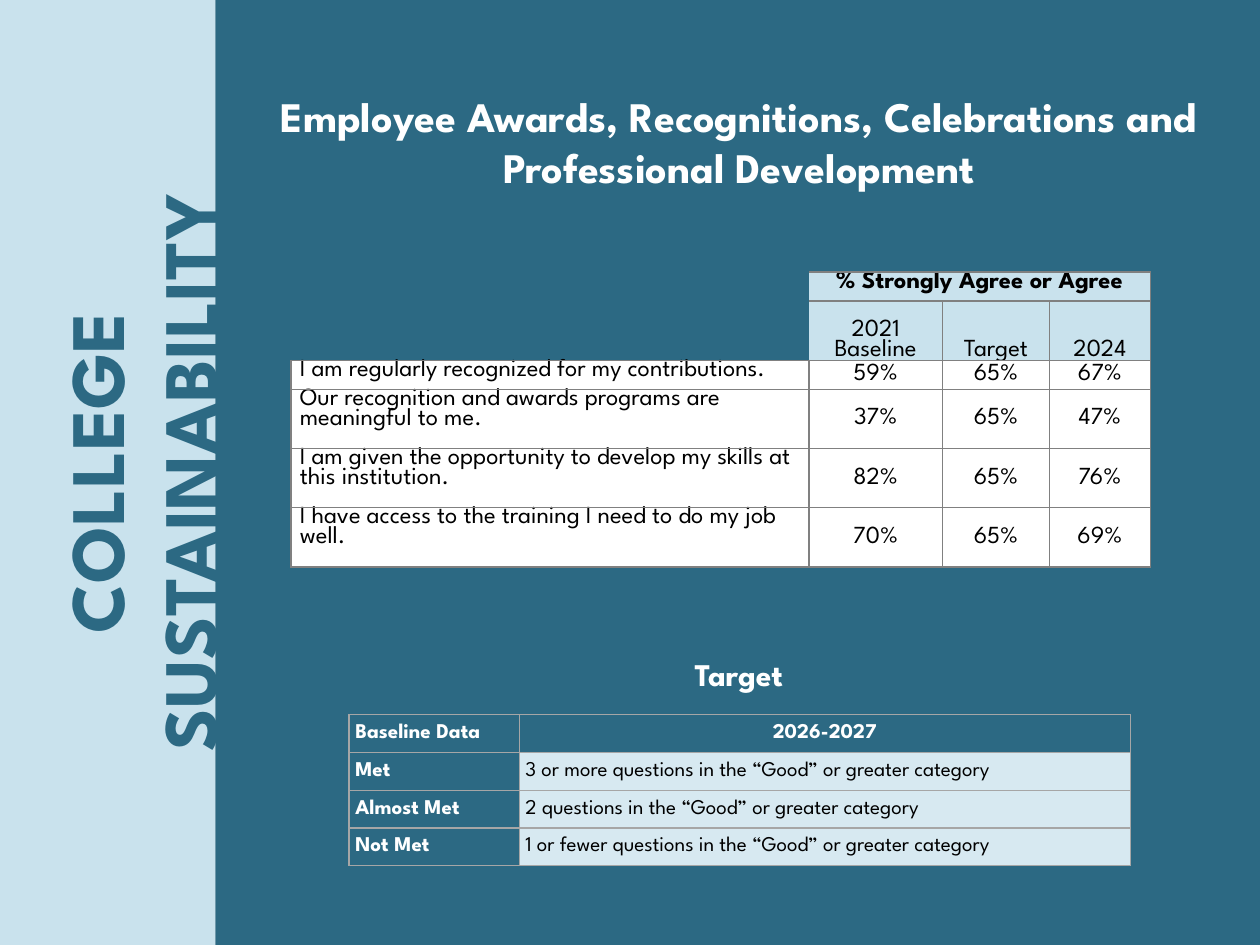
from lxml import etree
from pptx import Presentation
from pptx.dml.color import RGBColor
from pptx.enum.shapes import MSO_SHAPE
from pptx.enum.text import MSO_ANCHOR, MSO_AUTO_SIZE, PP_ALIGN
from pptx.oxml.ns import qn
from pptx.util import Inches, Pt

RECTANGLE = MSO_SHAPE.RECTANGLE
LEFT, CENTER = PP_ALIGN.LEFT, PP_ALIGN.CENTER
TOP, MIDDLE, BOTTOM = MSO_ANCHOR.TOP, MSO_ANCHOR.MIDDLE, MSO_ANCHOR.BOTTOM
FIT_SHAPE = MSO_AUTO_SIZE.SHAPE_TO_FIT_TEXT
FONT = "League Spartan"
COLORS = {
    "teal": "2C6983", "sidebar": "C9E2ED", "pale": "D7E9F1",
    "white": "FFFFFF", "black": "000000",
    "survey_border": "808080", "target_border": "A6A6A6",
}
SURVEY = [
    ("I am regularly recognized for my contributions.", "59%", "65%", "67%"),
    ("Our recognition and awards programs are meaningful to me.", "37%", "65%", "47%"),
    ("I am given the opportunity to develop my skills at this institution.",
     "82%", "65%", "76%"),
    ("I have access to the training I need to do my job well.", "70%", "65%", "69%"),
]
RATINGS = [
    ("Met", "3 or more questions in the “Good” or greater category"),
    ("Almost Met", "2 questions in the “Good” or greater category"),
    ("Not Met", "1 or fewer questions in the “Good” or greater category"),
]


def rgb(name):
    return RGBColor.from_string(COLORS[name])


def write(paragraph, text, size, color, bold, align):
    paragraph.alignment = align
    run = paragraph.add_run()
    run.text = text
    run.font.name = FONT
    run.font.size = Pt(size)
    run.font.bold = bold
    run.font.color.rgb = rgb(color)


def add_panel(slide, left, width, color):
    panel = slide.shapes.add_shape(RECTANGLE, Inches(left), 0, Inches(width), Inches(7.5))
    panel.shadow.inherit = False
    panel.fill.solid()
    panel.fill.fore_color.rgb = rgb(color)
    panel.line.fill.background()


def fill_heading(heading, box, lines, size, color):
    """Place a text box or title placeholder and write its bold centred lines."""
    heading.left, heading.top, heading.width, heading.height = map(Inches, box)
    frame = heading.text_frame
    frame.word_wrap = True
    frame.auto_size = FIT_SHAPE
    frame.vertical_anchor = TOP
    for index, line in enumerate(lines):
        paragraph = frame.add_paragraph() if index else frame.paragraphs[0]
        write(paragraph, line, size, color, True, CENTER)


def add_heading(slide, box, lines, size, color):
    heading = slide.shapes.add_textbox(0, 0, 0, 0)
    fill_heading(heading, box, lines, size, color)
    return heading


def add_table(slide, left, top, widths, heights):
    table = slide.shapes.add_table(
        len(heights), len(widths), Inches(left), Inches(top),
        Inches(sum(widths)), Inches(sum(heights))).table
    table.first_row = table.horz_banding = False
    for column, width in zip(table.columns, widths):
        column.width = Inches(width)
    for row, height in zip(table.rows, heights):
        row.height = Inches(height)
    return table


def style_cell(cell, fill, border, points, sides="LRTB", margins=(0, 0)):
    cell.margin_left = cell.margin_right = Inches(margins[0])
    cell.margin_top = cell.margin_bottom = Inches(margins[1])
    properties = cell._tc.get_or_add_tcPr()
    for side in "LRTB":
        drawn = side in sides
        line = etree.SubElement(properties, qn(f"a:ln{side}"),
                                w=str(Pt(points) if drawn else 0))
        if drawn:
            solid = etree.SubElement(line, qn("a:solidFill"))
            etree.SubElement(solid, qn("a:srgbClr"), val=COLORS[border])
        else:
            etree.SubElement(line, qn("a:noFill"))
    cell.fill.solid()
    cell.fill.fore_color.rgb = rgb(fill)


def fill_survey_cell(cell, text, fill, align=CENTER, anchor=MIDDLE, bold=False, sides="LRTB"):
    style_cell(cell, fill, "survey_border", 1, sides, (0.07, 0))
    cell.vertical_anchor = anchor
    paragraph = cell.text_frame.paragraphs[0]
    paragraph.line_spacing = 0.88
    write(paragraph, text, 14, "black", bold, align)


def leave_blank(cell, sides):
    style_cell(cell, "teal", "survey_border", 1, sides)
    etree.SubElement(cell.text_frame.paragraphs[0]._p, qn("a:endParaRPr"), sz="1000")


def add_survey_table(slide):
    one_line, two_lines = 0.23, 0.47
    table = add_table(slide, 2.31, 2.16, [4.11, 1.06, 0.85, 0.8],
                      [one_line, two_lines, one_line] + [two_lines] * 3)
    leave_blank(table.cell(0, 0), "")
    leave_blank(table.cell(1, 0), "B")
    table.cell(0, 1).merge(table.cell(0, 3))
    fill_survey_cell(table.cell(0, 1), "% Strongly Agree or Agree", "sidebar",
                     anchor=TOP, bold=True, sides="RTB")
    for column in (2, 3):
        style_cell(table.cell(0, column), "sidebar", "survey_border", 1, "RTB")
    for column, label in enumerate(("2021 Baseline", "Target", "2024"), 1):
        fill_survey_cell(table.cell(1, column), label, "sidebar", anchor=BOTTOM,
                         sides="RTB" if column == 1 else "LRTB")
    for row, (question, *percentages) in enumerate(SURVEY, 2):
        fill_survey_cell(table.cell(row, 0), question, "white", LEFT, TOP)
        for column, percentage in enumerate(percentages, 1):
            fill_survey_cell(table.cell(row, column), percentage, "white")


def add_target_table(slide):
    rows = [("Baseline Data", "2026-2027"), *RATINGS]
    table = add_table(slide, 2.77, 5.67, [1.35, 4.85], [0.3] * len(rows))
    for row, labels in enumerate(rows):
        for column, label in enumerate(labels):
            header = row == 0 or column == 0
            cell = table.cell(row, column)
            style_cell(cell, "teal" if header else "pale", "target_border", 0.75,
                       margins=(0.05, 0.05))
            cell.vertical_anchor = MIDDLE
            write(cell.text_frame.paragraphs[0], label, 12,
                  "white" if header else "black", header,
                  CENTER if row == 0 and column == 1 else LEFT)


def main():
    prs = Presentation()
    prs.slide_width, prs.slide_height = Inches(10), Inches(7.5)
    slide = prs.slides.add_slide(prs.slide_layouts[5])
    title = slide.shapes.title

    add_panel(slide, 0, 1.71, "sidebar")
    add_panel(slide, 1.71, 8.29, "teal")
    section = add_heading(slide, (-2.63, 2.96, 7.5, 1.58),
                          ["COLLEGE", "SUSTAINABILITY"], 44, "teal")
    section.rotation = 270
    # The title stands in front of the panels.
    slide.shapes._spTree.append(title._element)
    fill_heading(title, (2.04, 0.67, 7.65, 0.91),
                 ["Employee Awards, Recognitions, Celebrations and Professional Development"],
                 24, "white")
    add_heading(slide, (3.98, 5.15, 3.77, 0.4), ["Target"], 18, "white")
    add_target_table(slide)
    add_survey_table(slide)
    prs.save("out.pptx")


if __name__ == "__main__":
    main()
